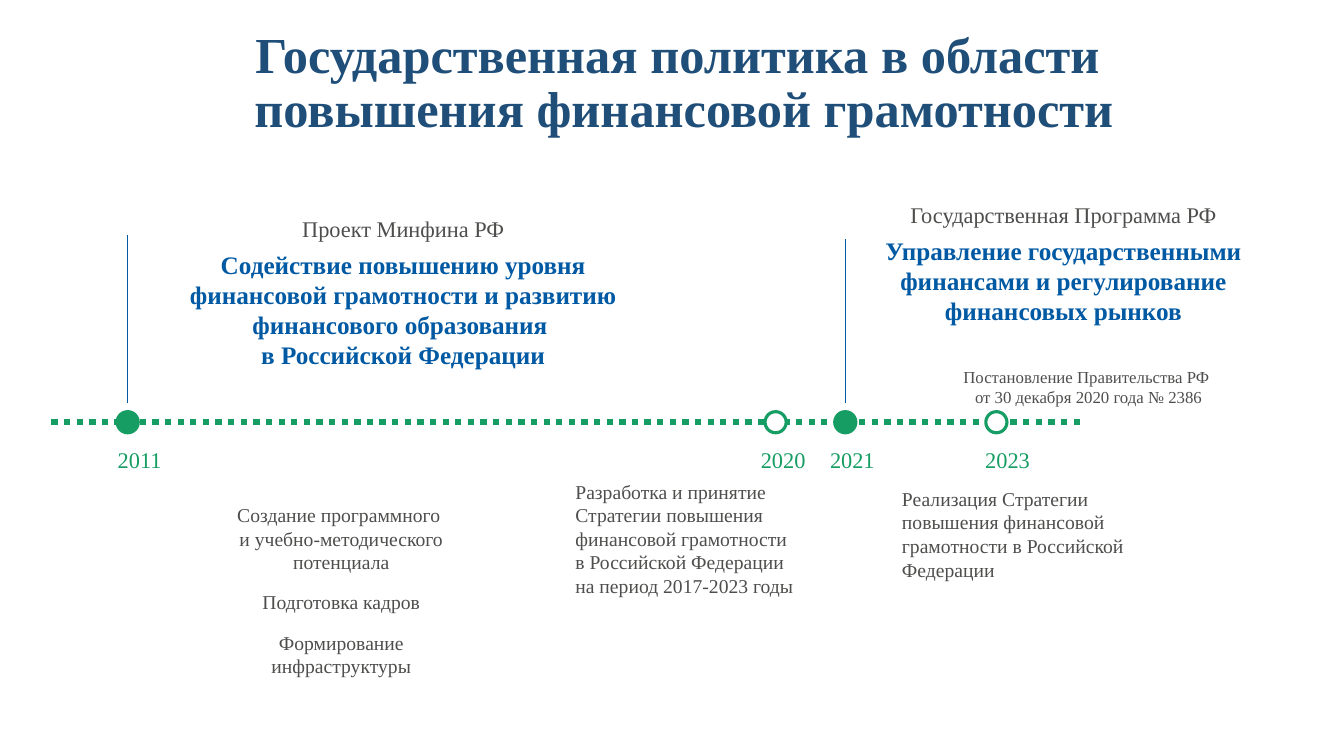
from lxml import etree
from pptx import Presentation
from pptx.dml.color import RGBColor
from pptx.enum.dml import MSO_LINE_DASH_STYLE as DASH
from pptx.enum.shapes import MSO_CONNECTOR, MSO_SHAPE
from pptx.enum.text import MSO_ANCHOR, MSO_AUTO_SIZE, PP_ALIGN
from pptx.oxml.ns import qn
from pptx.util import Pt

FONT = "Times New Roman"
COLORS = {
    "title": "1F4E79",
    "green": "169D64",
    "blue": "0059A3",
    "gray": "4E4E4D",
    "white": "FFFFFF",
}
AXIS_Y = 301.6
MARKER_SIZE = 15.1
STEM_BOTTOM = 288
YEAR_TOP = 315.4
LINE_HEIGHT = 26.6
NAME_OFFSET = 23.8

MILESTONES = [
    ("2011", 91.2, 65.5, 68.4, 167.8),
    ("2020", 554, 528.5, 61.9, None),
    ("2021", 603.8, 578.2, 61.2, 170.6),
    ("2023", 711.7, 686.2, 67, None),
]
TASKS = [
    "Создание программного \vи учебно-методического потенциала",
    "Подготовка кадров",
    "Формирование инфраструктуры",
]


def color(name):
    return RGBColor.from_string(COLORS[name])


def style_paragraph(paragraph, size, color_name, bold, align):
    paragraph.alignment = align
    paragraph.font.name = FONT
    paragraph.font.size = Pt(size)
    paragraph.font.bold = bold
    paragraph.font.color.rgb = color(color_name)


def add_text(shapes, box, lines, size, color_name, bold=False,
             align=PP_ALIGN.CENTER, space_after=0):
    shape = shapes.add_textbox(*map(Pt, box))
    frame = shape.text_frame
    frame.word_wrap = True
    frame.auto_size = MSO_AUTO_SIZE.SHAPE_TO_FIT_TEXT
    frame.text = "\n".join(lines)
    for paragraph in frame.paragraphs:
        style_paragraph(paragraph, size, color_name, bold, align)
        paragraph.space_after = Pt(space_after)


def add_line(shapes, start, end, color_name, width, dash=None):
    line = shapes.add_connector(MSO_CONNECTOR.STRAIGHT, *map(Pt, start + end))
    line.line.color.rgb = color(color_name)
    line.line.width = Pt(width)
    if dash:
        line.line.dash_style = dash
    properties = line._element.find(qn("p:spPr"))
    etree.SubElement(properties, qn("a:effectLst"))


def add_title(slide, box):
    title = slide.shapes.title
    title.left, title.top, title.width, title.height = map(Pt, box)
    frame = title.text_frame
    frame.text = "Государственная политика в области \vповышения финансовой грамотности"
    frame.auto_size = MSO_AUTO_SIZE.NONE
    frame.vertical_anchor = MSO_ANCHOR.MIDDLE
    paragraph = frame.paragraphs[0]
    style_paragraph(paragraph, 36, "title", True, PP_ALIGN.CENTER)
    paragraph.line_spacing = 0.9


def add_milestone(shapes, year, center, label_left, label_width, stem_top):
    if stem_top is not None:
        add_line(shapes, (center, stem_top), (center, STEM_BOTTOM), "blue", 0.5)
    corner = (center - MARKER_SIZE / 2, AXIS_Y - MARKER_SIZE / 2)
    marker = shapes.add_shape(
        MSO_SHAPE.OVAL, *map(Pt, corner + (MARKER_SIZE, MARKER_SIZE)))
    marker.shadow.inherit = False
    marker.fill.solid()
    marker.fill.fore_color.rgb = color("white" if stem_top is None else "green")
    marker.line.color.rgb = color("green")
    marker.line.width = Pt(2.25)
    add_text(shapes, (label_left, YEAR_TOP, label_width, LINE_HEIGHT),
             [year], 16, "green")


def add_timeline(slide, left, right):
    add_line(slide.shapes, (left, AXIS_Y), (right, AXIS_Y), "green", 4.5,
             DASH.ROUND_DOT)
    for milestone in MILESTONES:
        add_milestone(slide.shapes, *milestone)


def add_program(slide, box, kind, name):
    left, top, width, height = box
    shapes = slide.shapes.add_group_shape().shapes
    add_text(shapes, (left, top + NAME_OFFSET, width, height - NAME_OFFSET),
             [name], 18, "blue", bold=True)
    add_text(shapes, (left, top, width, LINE_HEIGHT), [kind], 16, "gray")
    return shapes


def add_activity(slide, box, lines, align=PP_ALIGN.LEFT):
    add_text(slide.shapes, box, lines, 14, "gray", align=align, space_after=12)


def main():
    presentation = Presentation()
    presentation.slide_width = Pt(960)
    presentation.slide_height = Pt(540)
    slide = presentation.slides.add_slide(presentation.slide_layouts[5])

    add_title(slide, (65.5, 18, 846, 84.2))
    add_timeline(slide, 36.7, 774)
    add_program(slide, (100.8, 150.5, 374.4, 118.1), "Проект Минфина РФ",
                "Содействие повышению уровня финансовой грамотности и развитию "
                "финансового образования \vв Российской Федерации")
    state_program = add_program(
        slide, (611.3, 140.4, 296.6, 96.5), "Государственная Программа РФ",
        "Управление государственными финансами и регулирование финансовых рынков")
    add_text(state_program, (618.5, 258.5, 318.2, 36),
             ["Постановление Правительства РФ \vот 30 декабря 2020 года № 2386"],
             12, "gray")

    add_activity(slide, (142.6, 355.7, 202.3, 133.2), TASKS, PP_ALIGN.CENTER)
    add_activity(slide, (403.9, 339.1, 174.2, 92.2), [
        "Разработка и принятие Стратегии повышения финансовой грамотности "
        "\vв Российской Федерации \vна период 2017-2023 годы"])
    add_activity(slide, (637.2, 344.2, 182.2, 74.9), [
        "Реализация Стратегии повышения финансовой грамотности "
        "в Российской Федерации"])
    presentation.save("out.pptx")


if __name__ == "__main__":
    main()
